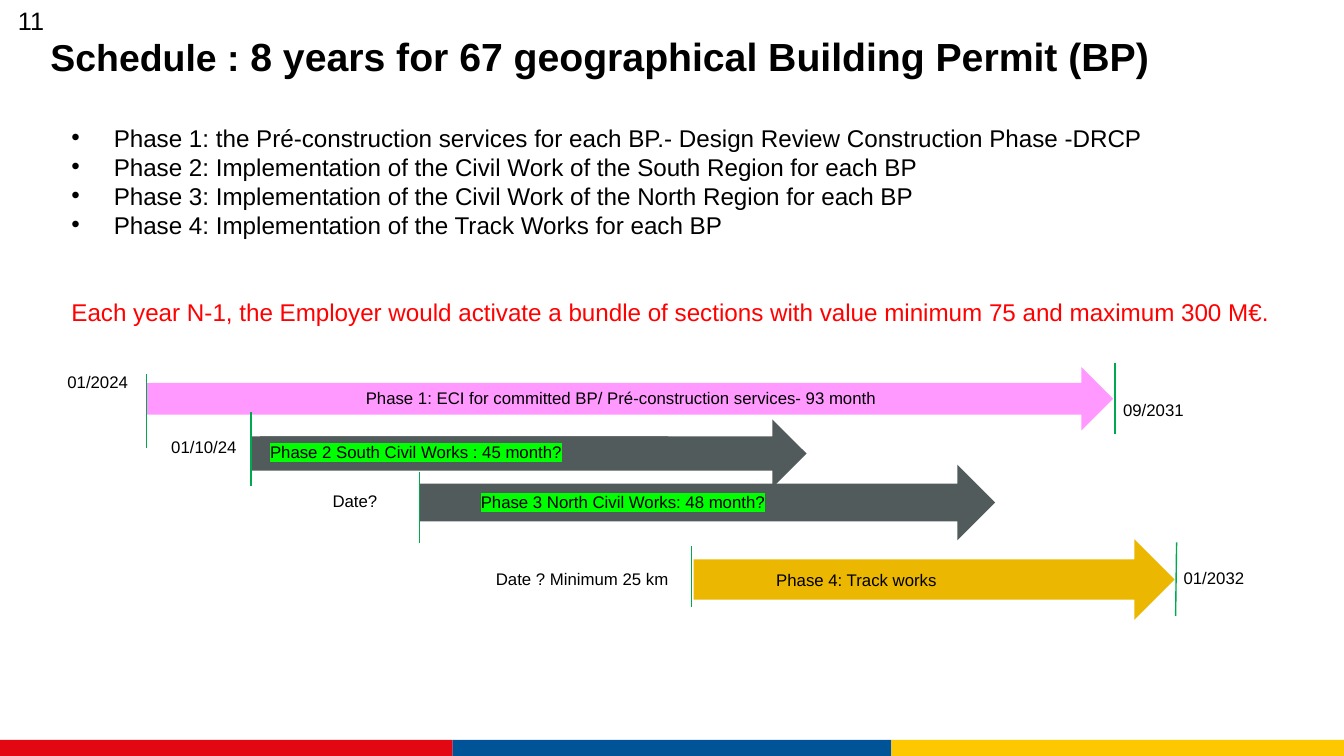
from lxml import etree
from pptx import Presentation
from pptx import util as u
from pptx.dml.color import RGBColor
from pptx.enum import shapes, text
from pptx.oxml import ns

PX = 9144
BLACK = RGBColor(0x00, 0x00, 0x00)
RED = RGBColor(0xFF, 0x00, 0x00)
PINK = RGBColor(0xFF, 0x99, 0xFF)
SLATE = RGBColor(0x52, 0x5B, 0x5C)
GOLD = RGBColor(0xEB, 0xB7, 0x00)
GREEN = RGBColor(0x00, 0xA9, 0x4F)
LIME = RGBColor(0x00, 0xFF, 0x00)
FOOTER = (RGBColor(0xE3, 0x06, 0x13), RGBColor(0x00, 0x53, 0x96), RGBColor(0xFE, 0xC8, 0x00))

PHASES = [
    "Phase 1: the Pré-construction services for each BP.- Design Review Construction Phase -DRCP",
    "Phase 2: Implementation of the Civil Work of the South Region for each BP",
    "Phase 3: Implementation of the Civil Work of the North Region for each BP",
    "Phase 4: Implementation of the Track Works for each BP",
]
BUDGET = ("Each year N-1, the Employer would activate a bundle of sections "
          "with value minimum 75 and maximum 300 M€.")

BARS = [
    (PINK, (88, 4, 959, 63), (296, 20, 620, 30), None,
     "Phase 1: ECI for committed BP/ Pré-construction services- 93 month"),
    (SLATE, (193, 56, 550, 68), (201, 73, 405, 30), LIME,
     "Phase 2 South Civil Works : 45 month?"),
    (SLATE, (359, 101, 571, 75), (410, 123, 389, 30), LIME,
     "Phase 3 North Civil Works: 48 month?"),
    (GOLD, (631, 175, 477, 80), (703, 200, 235, 30), None, "Phase 4: Track works"),
]
DATES = [
    ("01/2024", (0, 4, 100, 30), (88, 11, 88, 84)),
    ("09/2031", (1047, 32, 101, 30), (1049, 0, 1049, 71)),
    ("01/10/24", (103, 68, 98, 30), (192, 49, 192, 122)),
    ("Date?", (263, 122, 111, 30), (359, 108, 359, 179)),
    ("Date ? Minimum 25 km", (425, 199, 220, 30), (629, 182, 629, 242)),
    ("01/2032", (1107, 198, 101, 30), (1110, 178, 1109, 251)),
]


def emu(*lengths):
    """Turn px lengths into EMU."""
    return [n * PX for n in lengths]


def shift(box, part):
    """Place a part relative to the corner of a box."""
    return part[0] + box[0], part[1] + box[1], part[2], part[3]


def add_run(p, words, size, color=BLACK, bold=False, highlight=None):
    """Append a formatted run to a paragraph."""
    r = p.add_run()
    r.text = words
    for name, value in {"name": "Arial", "size": u.Pt(size), "bold": bold}.items():
        setattr(r.font, name, value)
    r.font.color.rgb = color
    if highlight is not None:
        mark = etree.Element(ns.qn("a:highlight"))
        etree.SubElement(mark, ns.qn("a:srgbClr"), val=str(highlight))
        r._r.get_or_add_rPr().find(ns.qn("a:solidFill")).addnext(mark)


def add_text(s, box):
    """Add a wrapping text box and return its frame."""
    tf = s.shapes.add_textbox(*emu(*box)).text_frame
    tf.word_wrap = True
    return tf


def add_block(s, kind, box, color):
    """Add a flat filled shape."""
    sp = s.shapes.add_shape(kind, *emu(*box))
    sp.shadow.inherit = False
    sp.fill.solid()
    sp.fill.fore_color.rgb = color
    sp.line.fill.background()
    return sp


def add_tick(s, box, ends):
    """Add a thin date marker."""
    x, y = box[:2]
    line = s.shapes.add_connector(
        shapes.MSO_CONNECTOR.STRAIGHT,
        *emu(x + ends[0], y + ends[1], x + ends[2], y + ends[3]))
    line.line.color.rgb = GREEN
    line.line.width = u.Pt(1)
    etree.SubElement(line._element.spPr, ns.qn("a:effectLst"))


def footer(s, box):
    """Draw the three-colour strip."""
    x, y, w, h = box
    edges = (0, 449, 884, w)
    for color, left, right in zip(FOOTER, edges, edges[1:]):
        add_block(s, shapes.MSO_SHAPE.RECTANGLE, (x + left, y, right - left, h), color)


def header(s, box):
    """Write the slide number and the title."""
    add_run(add_text(s, shift(box, (8, 0, 698, 40))).paragraphs[0], "11", 18)
    tf = add_text(s, shift(box, (50, 16, 1189, 78)))
    tf.vertical_anchor = text.MSO_ANCHOR.MIDDLE
    tf.margin_left = tf.margin_right = 0
    p = tf.paragraphs[0]
    add_run(p, "Schedule : ", 26.7, bold=True)
    add_run(p, "8 years for 67 geographical Building Permit (BP)", 28, bold=True)


def phase_list(s, box):
    """List the phases and the yearly budget rule."""
    tf = add_text(s, box)
    for i, words in enumerate(PHASES):
        p = tf.paragraphs[0] if i == 0 else tf.add_paragraph()
        pPr = p._p.get_or_add_pPr()
        for name, value in {"marL": 42 * PX, "indent": -42 * PX}.items():
            pPr.set(name, str(value))
        etree.SubElement(pPr, ns.qn("a:buFont"), typeface="Arial")
        etree.SubElement(pPr, ns.qn("a:buChar"), char="•")
        add_run(p, words, 17.3)
    p = tf.add_paragraph()
    p.space_before = u.Pt(41.4)
    add_run(p, BUDGET, 17.3, RED)


def schedule(s, box):
    """Draw the phase arrows with their captions and dates."""
    for color, arrow, caption, highlight, words in BARS:
        add_block(s, shapes.MSO_SHAPE.RIGHT_ARROW, shift(box, arrow), color)
        tf = add_block(s, shapes.MSO_SHAPE.RECTANGLE, shift(box, caption), color).text_frame
        tf.word_wrap = True
        tf.vertical_anchor = text.MSO_ANCHOR.TOP
        p = tf.paragraphs[0]
        p.alignment = text.PP_ALIGN.LEFT
        add_run(p, words, 12, highlight=highlight)
    for words, label, tick in DATES:
        add_tick(s, box, tick)
        add_run(add_text(s, shift(box, label)).paragraphs[0], words, 12)


def main():
    """Build the schedule slide."""
    prs = Presentation()
    prs.slide_width, prs.slide_height = emu(1333, 750)
    s = prs.slides.add_slide(prs.slide_layouts[6])
    footer(s, (0, 734, 1333, 16))
    phase_list(s, (61, 117, 1272, 284))
    schedule(s, (57, 360, 1208, 255))
    header(s, (0, 0, 1333, 94))
    prs.save("out.pptx")


if __name__ == "__main__":
    main()
